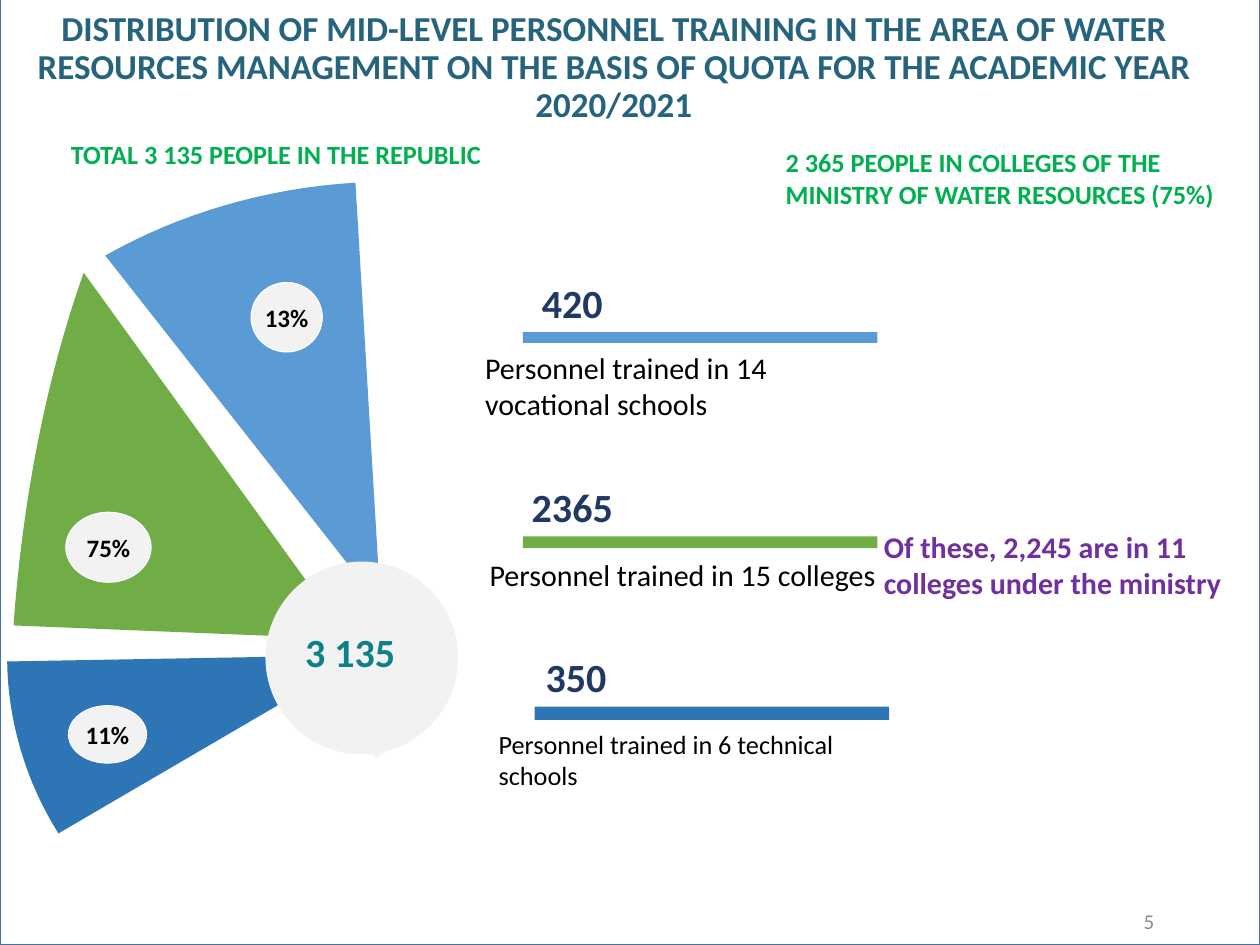
from pptx import Presentation
from pptx.dml.color import RGBColor
from pptx.enum.shapes import MSO_SHAPE
from pptx.enum.text import MSO_ANCHOR, MSO_AUTO_SIZE, PP_ALIGN
from pptx.util import Emu, Pt

EMU_PER_PX = 9144
CURVE_STEPS = 16
FONT = "Calibri"

WHITE = RGBColor(0xFF, 0xFF, 0xFF)
BLACK = RGBColor(0x00, 0x00, 0x00)
FRAME_BLUE = RGBColor(0x43, 0x73, 0x9E)
LIGHT_BLUE = RGBColor(0x5B, 0x9B, 0xD5)
DARK_BLUE = RGBColor(0x2E, 0x75, 0xB6)
GREEN = RGBColor(0x70, 0xAD, 0x47)
PALE_GRAY = RGBColor(0xF2, 0xF2, 0xF2)
NAVY = RGBColor(0x20, 0x38, 0x64)
BRIGHT_GREEN = RGBColor(0x00, 0xB0, 0x50)
TITLE_TEAL = RGBColor(0x26, 0x64, 0x7D)
TOTAL_TEAL = RGBColor(0x0E, 0x80, 0x89)
PURPLE = RGBColor(0x70, 0x30, 0xA0)
NUMBER_GRAY = RGBColor(0x8C, 0x8C, 0x8C)


def px(value):
    return Emu(round(value * EMU_PER_PX))


def curve_points(start, first, second, end):
    points = []
    for step in range(1, CURVE_STEPS + 1):
        t = step / CURVE_STEPS
        u = 1 - t
        weights = (u ** 3, 3 * u * u * t, 3 * u * t * t, t ** 3)
        points.append(tuple(
            sum(weight * value for weight, value in zip(weights, values))
            for values in zip(start, first, second, end)
        ))
    return points


class SlideBuilder:
    def __init__(self, slide):
        self.slide = slide
        self.font = FONT

    def paint(self, shape, fill, line=None, line_width=1):
        shape.shadow.inherit = False
        shape.fill.solid()
        shape.fill.fore_color.rgb = fill
        if line is None:
            shape.line.fill.background()
        else:
            shape.line.color.rgb = line
            shape.line.width = Pt(line_width)

    def set_text(self, shape, text, size, color, bold=False, align=PP_ALIGN.LEFT,
                 anchor=MSO_ANCHOR.TOP, insets=(0, 0), wrap=True, spacing=None):
        frame = shape.text_frame
        frame.auto_size = MSO_AUTO_SIZE.NONE
        frame.word_wrap = wrap
        frame.vertical_anchor = anchor
        frame.margin_left = frame.margin_right = px(insets[0])
        frame.margin_top = frame.margin_bottom = px(insets[1])
        paragraph = frame.paragraphs[0]
        paragraph.alignment = align
        if spacing:
            paragraph.line_spacing = spacing
        run = paragraph.add_run()
        run.text = text
        run.font.name = self.font
        run.font.size = Pt(size)
        run.font.bold = bold
        run.font.color.rgb = color

    def title(self, box, text):
        title = self.slide.shapes.title
        title.element.getparent().append(title.element)
        title.left, title.top, title.width, title.height = map(px, box)
        self.set_text(title, text, 28, TITLE_TEAL, True, PP_ALIGN.CENTER,
                      MSO_ANCHOR.MIDDLE, (13, 7), spacing=0.9)

    def shape(self, kind, box, fill, line=None, line_width=1):
        shape = self.slide.shapes.add_shape(kind, *map(px, box))
        self.paint(shape, fill, line, line_width)
        return shape

    def text(self, box, text, size, color, **style):
        shape = self.slide.shapes.add_textbox(*map(px, box))
        self.set_text(shape, text, size, color, **style)

    def badge(self, box, text, line_width):
        badge = self.shape(MSO_SHAPE.OVAL, box, PALE_GRAY, WHITE, line_width)
        self.set_text(badge, text, 20, BLACK, True, PP_ALIGN.CENTER, MSO_ANCHOR.MIDDLE)

    def wedge(self, tip, start, first, second, end, fill):
        outline = [start, *curve_points(start, first, second, end)]
        builder = self.slide.shapes.build_freeform(px(tip[0]), px(tip[1]), scale=1.0)
        builder.add_line_segments([(px(x), px(y)) for x, y in outline], close=True)
        self.paint(builder.convert_to_shape(), fill)


def main():
    presentation = Presentation()
    presentation.slide_width = px(1400)
    presentation.slide_height = px(1050)
    slide = presentation.slides.add_slide(presentation.slide_layouts[5])
    builder = SlideBuilder(slide)

    builder.shape(MSO_SHAPE.RECTANGLE, (0, -1, 1400, 1051), WHITE, FRAME_BLUE)

    builder.wedge((423, 673), (395, 203), (296, 209), (200, 237), (117, 284), LIGHT_BLUE)
    builder.badge((279, 314, 79, 77), "13%", 1)
    builder.wedge((326, 700), (418, 842), (468, 812), (498, 759), (499, 703), PALE_GRAY)
    builder.wedge((404, 728), (8, 735), (9, 802), (29, 869), (65, 926), DARK_BLUE)
    builder.wedge((387, 710), (93, 303), (51, 421), (25, 556), (15, 695), GREEN)
    builder.shape(MSO_SHAPE.OVAL, (295, 624, 214, 214), PALE_GRAY)
    builder.badge((76, 784, 87, 64), "11%", 0.75)
    builder.badge((73, 569, 95, 78), "75%", 0.75)

    groups = [
        ("420", (583, 309, 106, 54), (581, 369, 394, 12), LIGHT_BLUE,
         "Personnel trained in 14 vocational schools", (539, 388, 437, 81), 24),
        ("2365", (583, 536, 106, 54), (581, 596, 394, 13), GREEN,
         "Personnel trained in 15 colleges", (544, 618, 432, 40), 24),
        ("350", (591, 725, 98, 54), (594, 785, 394, 15), DARK_BLUE,
         "Personnel trained in 6 technical schools", (554, 809, 435, 71), 21),
    ]
    for count, count_box, bar_box, color, label, label_box, label_size in groups:
        builder.shape(MSO_SHAPE.RECTANGLE, bar_box, color)
        builder.text(label_box, label, label_size, BLACK)
        builder.text(count_box, count, 32, NAVY, bold=True, align=PP_ALIGN.CENTER)

    builder.text((873, 163, 495, 71),
                 "2 365 PEOPLE IN COLLEGES OF THE MINISTRY OF WATER RESOURCES (75%)",
                 21, BRIGHT_GREEN, bold=True)
    builder.text((44, 154, 525, 35), "TOTAL 3 135 PEOPLE IN THE REPUBLIC",
                 21, BRIGHT_GREEN, bold=True, align=PP_ALIGN.CENTER)
    builder.title((23, 33, 1318, 85),
                  "DISTRIBUTION OF MID-LEVEL PERSONNEL TRAINING IN THE AREA OF WATER "
                  "RESOURCES MANAGEMENT ON THE BASIS OF QUOTA FOR THE ACADEMIC YEAR 2020/2021")
    builder.text((1261, 995, 139, 56), "5", 16.8, NUMBER_GRAY,
                 anchor=MSO_ANCHOR.MIDDLE, insets=(10, 5))
    builder.text((326, 690, 128, 67), "3 135", 32, TOTAL_TEAL, bold=True,
                 insets=(13, 7), wrap=False)
    builder.text((982, 587, 397, 81),
                 "Of these, 2,245 are in 11 colleges under the ministry",
                 24, PURPLE, bold=True)

    presentation.save("out.pptx")


if __name__ == "__main__":
    main()
